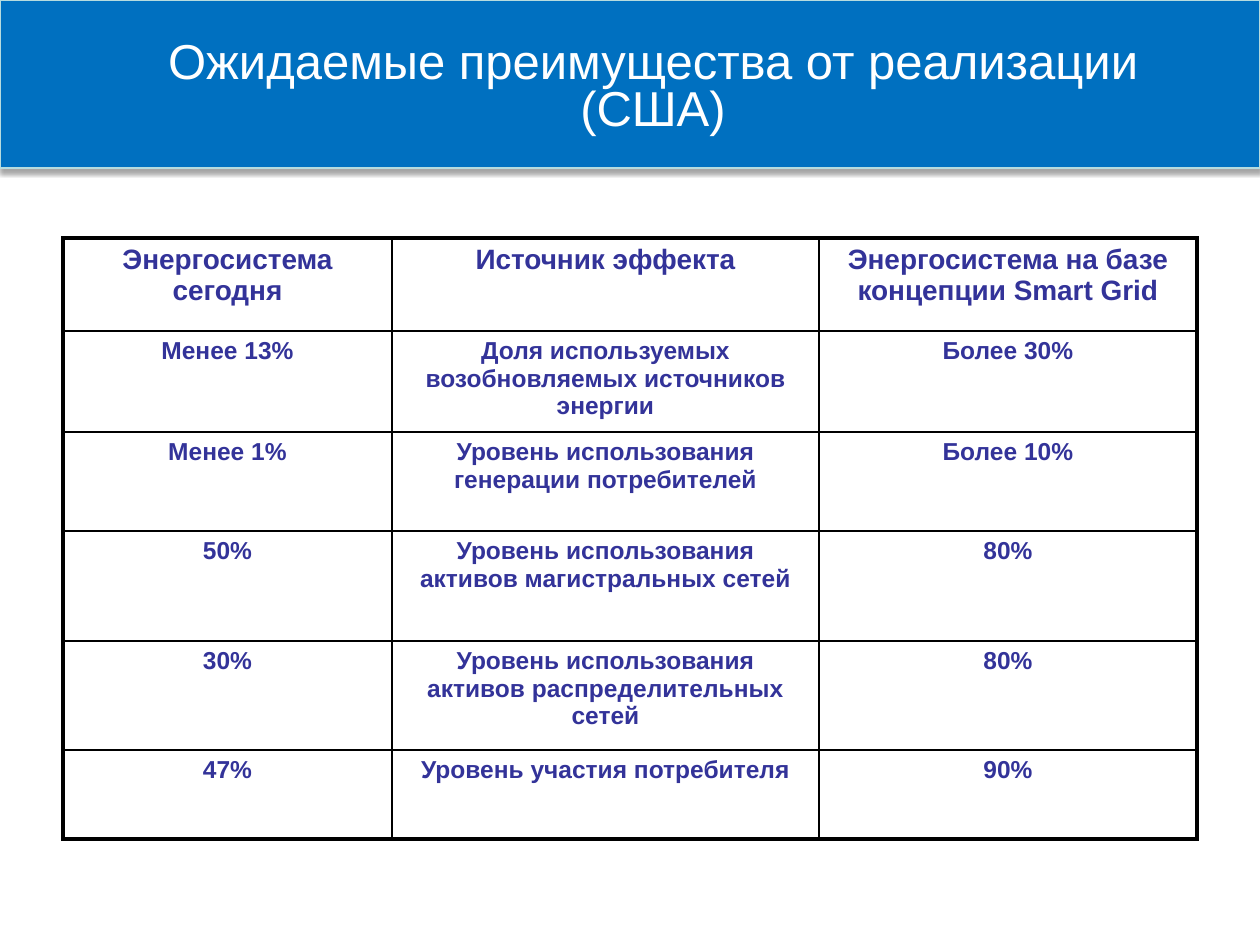
from lxml import etree
from pptx import Presentation
from pptx.dml.color import RGBColor
from pptx.enum.shapes import MSO_SHAPE
from pptx.enum.text import MSO_ANCHOR, MSO_AUTO_SIZE, PP_ALIGN
from pptx.oxml import parse_xml
from pptx.oxml.ns import nsdecls, qn
from pptx.util import Emu, Pt

RECTANGLE = MSO_SHAPE.RECTANGLE
CENTER = PP_ALIGN.CENTER
MIDDLE = MSO_ANCHOR.MIDDLE
NO_AUTOFIT = MSO_AUTO_SIZE.NONE
TITLE_ONLY_LAYOUT = 5

FONT = "Arial"
BLUE, PALE_TEAL, INDIGO, WHITE, BLACK = "0070C0", "B6DCDF", "333399", "FFFFFF", "000000"
THICK, THIN = 2.25, 1

COLUMN_WIDTHS = [329, 427, 378]
ROW_HEIGHTS = [93, 101, 99, 110, 109, 89]
ROWS = [
    ["Энергосистема сегодня", "Источник эффекта", "Энергосистема на базе концепции Smart Grid"],
    ["Менее 13%", "Доля используемых возобновляемых источников энергии", "Более 30%"],
    ["Менее 1%", "Уровень использования генерации потребителей", "Более 10%"],
    ["50%", "Уровень использования активов магистральных сетей", "80%"],
    ["30%", "Уровень использования активов распределительных сетей", "80%"],
    ["47%", "Уровень участия потребителя", "90%"],
]


def px(length):
    return Emu(round(length * 914400 / 126))


def color(hex_string):
    return RGBColor.from_string(hex_string)


def write_text(text_frame, text, size, text_color, bold=False, line_spacing=None):
    text_frame.word_wrap = True
    paragraph = text_frame.paragraphs[0]
    paragraph.text = text
    paragraph.alignment = CENTER
    if line_spacing:
        paragraph.line_spacing = line_spacing
    for run in paragraph.runs:
        run.font.name = FONT
        run.font.size = Pt(size)
        run.font.bold = bold
        run.font.color.rgb = color(text_color)


def set_borders(cell, **widths):
    """Draw black cell borders; widths in points are keyed L, R, T, B."""
    properties = cell._tc.get_or_add_tcPr()
    for index, side in enumerate("LRTB"):
        properties.insert(index, parse_xml(
            f'<a:ln{side} {nsdecls("a")} w="{Pt(widths[side])}">'
            f'<a:solidFill><a:srgbClr val="{BLACK}"/></a:solidFill></a:ln{side}>'))


def add_shadow(shape, blur, distance, opacity):
    """Add a downward black shadow; blur and distance in points, opacity in percent."""
    shape.shadow.inherit = False
    effects = shape._element.spPr.find(qn("a:effectLst"))
    shadow = etree.SubElement(effects, qn("a:outerShdw"), blurRad=str(Pt(blur)),
                              dist=str(Pt(distance)), dir="5400000", rotWithShape="0")
    shade = etree.SubElement(shadow, qn("a:srgbClr"), val=BLACK)
    etree.SubElement(shade, qn("a:alpha"), val=str(opacity * 1000))


def add_benefits_table(slide):
    table = slide.shapes.add_table(
        len(ROWS), len(COLUMN_WIDTHS), px(63), px(238),
        px(sum(COLUMN_WIDTHS)), px(sum(ROW_HEIGHTS))).table
    table.first_row = table.horz_banding = False
    for column, width in zip(table.columns, COLUMN_WIDTHS):
        column.width = px(width)
    last_row, last_column = len(ROWS) - 1, len(COLUMN_WIDTHS) - 1
    for i, (row, height) in enumerate(zip(ROWS, ROW_HEIGHTS)):
        table.rows[i].height = px(height)
        for j, text in enumerate(row):
            cell = table.cell(i, j)
            cell.fill.background()
            write_text(cell.text_frame, text, 14 if i else 16, INDIGO, bold=True)
            set_borders(cell,
                        L=THIN if j else THICK, R=THICK if j == last_column else THIN,
                        T=THIN if i else THICK, B=THICK if i == last_row else THIN)


def add_header_band(slide):
    band = slide.shapes.add_shape(RECTANGLE, 0, 0, px(1260), px(168))
    band.fill.solid()
    band.fill.fore_color.rgb = color(BLUE)
    band.line.color.rgb = color(PALE_TEAL)
    band.line.width = Pt(0.75)
    add_shadow(band, blur=3.1, distance=1.8, opacity=35)


def place_title(slide, text):
    """Fill the title placeholder and bring it in front of the band."""
    title = slide.shapes.title
    title.left, title.top, title.width, title.height = px(86), px(10), px(1134), px(158)
    title.text_frame.auto_size = NO_AUTOFIT
    title.text_frame.vertical_anchor = MIDDLE
    write_text(title.text_frame, text, 28, WHITE, line_spacing=0.8)
    title._element.getparent().append(title._element)


def main():
    presentation = Presentation()
    presentation.slide_width, presentation.slide_height = px(1260), px(945)
    slide = presentation.slides.add_slide(presentation.slide_layouts[TITLE_ONLY_LAYOUT])
    add_benefits_table(slide)
    add_header_band(slide)
    place_title(slide, "Ожидаемые преимущества от реализации\v(США)")
    presentation.save("out.pptx")


if __name__ == "__main__":
    main()
